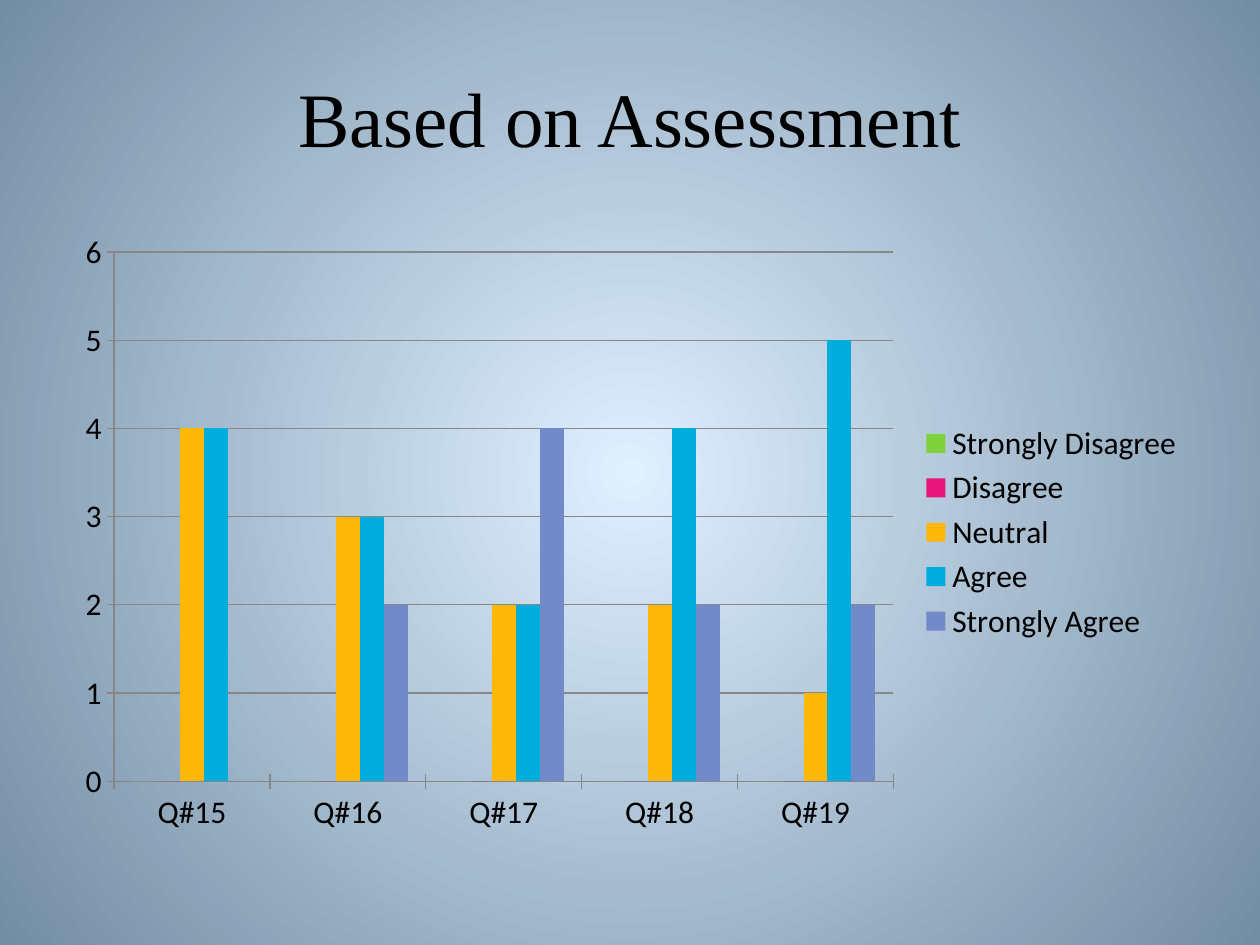
"""Builds a slide with a clustered column chart of assessment answers."""
from lxml import etree
from pptx import Presentation
from pptx.chart.data import CategoryChartData
from pptx.dml.color import RGBColor
from pptx.enum.chart import XL_CHART_TYPE, XL_LEGEND_POSITION, XL_TICK_MARK
from pptx.enum.text import MSO_ANCHOR, PP_ALIGN
from pptx.oxml.ns import qn
from pptx.util import Inches, Pt

COLUMN = XL_CHART_TYPE.COLUMN_CLUSTERED
RIGHT = XL_LEGEND_POSITION.RIGHT
CROSS = XL_TICK_MARK.CROSS
MIDDLE = MSO_ANCHOR.MIDDLE
CENTER = PP_ALIGN.CENTER

COLORS = {
    "text": "000000", "line": "878787", "glow": "DFF0FF", "edge": "738DA3",
    "Strongly Disagree": "7FD13B", "Disagree": "EA157A", "Neutral": "FEB80A",
    "Agree": "00ADDC", "Strongly Agree": "738AC8",
}
QUESTIONS = ["Q#15", "Q#16", "Q#17", "Q#18", "Q#19"]
ANSWERS = {
    "Strongly Disagree": (0, 0, 0, 0, 0),
    "Disagree": (0, 0, 0, 0, 0),
    "Neutral": (4, 3, 2, 2, 1),
    "Agree": (4, 3, 2, 4, 5),
    "Strongly Agree": (0, 2, 4, 2, 2),
}


class Deck:
    """Holds the style and the current slide."""

    def __init__(self):
        self.show = Presentation()
        self.show.slide_width = Inches(10)
        self.show.slide_height = Inches(7.5)
        self.slide = self.show.slides.add_slide(self.show.slide_layouts[5])

    def color(self, name):
        return RGBColor.from_string(COLORS[name])

    def style(self, font, face, size):
        font.name = face
        font.size = Pt(size)
        font.color.rgb = self.color("text")

    def backdrop(self, inner, outer):
        fill = self.slide.background.fill
        fill.gradient()
        for stop, name in zip(fill.gradient_stops, (inner, outer)):
            stop.color.rgb = self.color(name)
        grad = self.slide.element.find(".//" + qn("a:gradFill"))
        line = grad.find(qn("a:lin"))
        ring = etree.Element(qn("a:path"), path="circle")
        etree.SubElement(ring, qn("a:fillToRect"),
                         dict.fromkeys("ltrb", "50000"))
        grad.replace(line, ring)

    def title(self, text, box):
        shape = self.slide.shapes.title
        shape.left, shape.top, shape.width, shape.height = map(Inches, box)
        frame = shape.text_frame
        frame.text = text
        frame.vertical_anchor = MIDDLE
        para = frame.paragraphs[0]
        para.alignment = CENTER
        self.style(para.runs[0].font, "Times New Roman", 44)

    def chart(self, groups, rows, box):
        data = CategoryChartData()
        data.categories = groups
        for name, values in rows.items():
            data.add_series(name, values)
        frame = self.slide.shapes.add_chart(COLUMN, *map(Inches, box), data)
        chart = frame.chart
        self.style(chart.font, "Calibri", 18)
        chart.has_title = False
        chart.has_legend = True
        chart.legend.position = RIGHT
        chart.legend.include_in_layout = False
        plot = chart.plots[0]
        plot.vary_by_categories = False
        plot.gap_width = 150
        for row in plot.series:
            row.format.fill.solid()
            row.format.fill.fore_color.rgb = self.color(row.name)
        scale = chart.value_axis
        scale.minimum_scale, scale.maximum_scale = 0, 6
        scale.major_unit = 1
        scale.has_major_gridlines = True
        for axis in (chart.category_axis, scale):
            axis.major_tick_mark = CROSS
            axis.format.line.color.rgb = self.color("line")
        scale.major_gridlines.format.line.color.rgb = self.color("line")


def main():
    deck = Deck()
    deck.backdrop("glow", "edge")
    deck.title("Based on Assessment", (0.5, 0.3, 9, 1.25))
    deck.chart(QUESTIONS, ANSWERS, (0.5, 1.75, 9, 4.95))
    deck.show.save("out.pptx")


if __name__ == "__main__":
    main()
